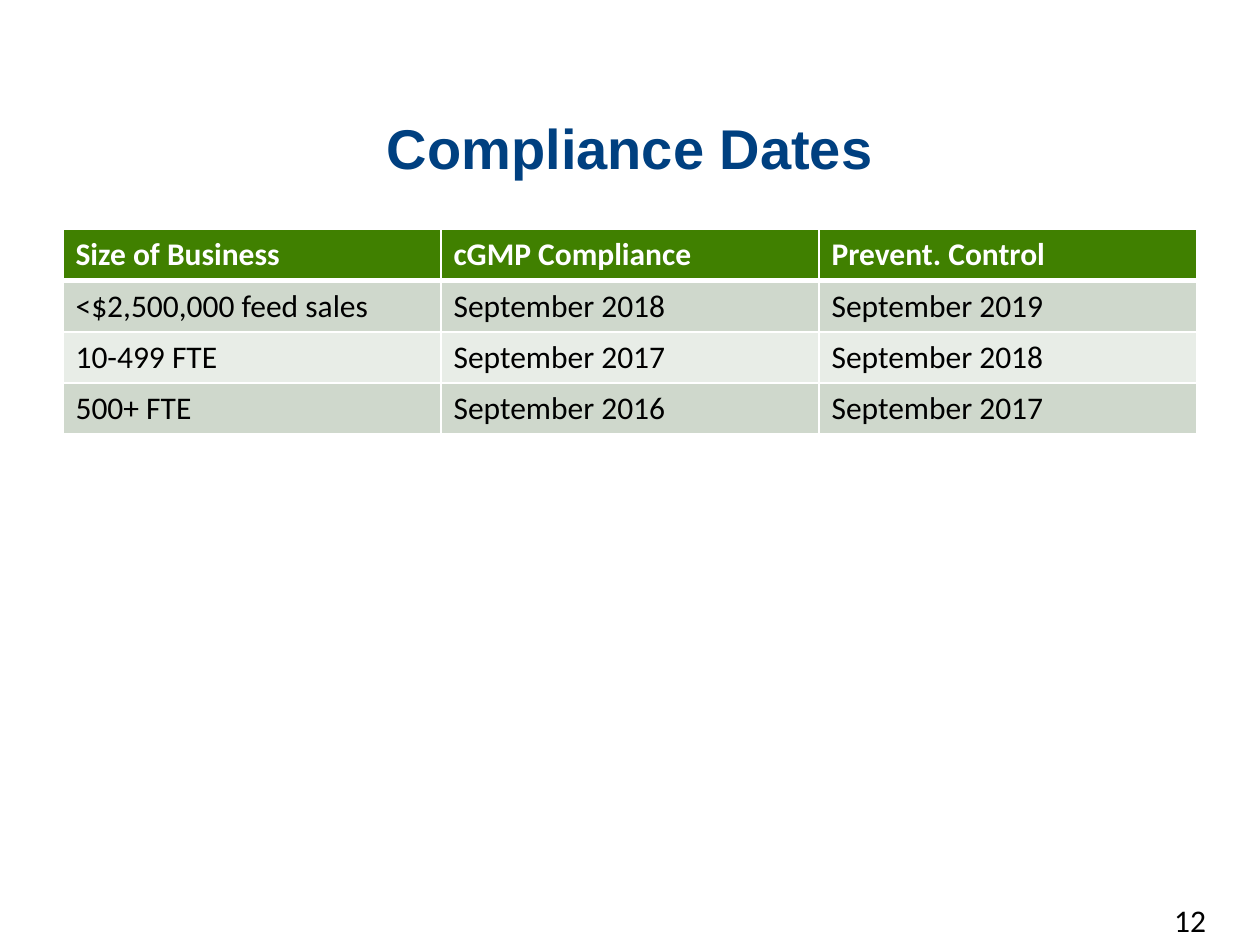
from lxml.etree import SubElement
from pptx import Presentation
from pptx.dml.color import RGBColor
from pptx.enum.text import MSO_ANCHOR as Anchor, PP_ALIGN as Align
from pptx.oxml.ns import qn
from pptx.util import Cm, Pt

WHITE = "FFFFFF"
BLACK = "000000"
NAVY = "004080"
GREEN = "408000"
BANDS = ("CFD8CC", "E8EDE7")
COMPLIANCE_ROWS = [
    ("Size of Business", "cGMP Compliance", "Prevent. Control"),
    ("<$2,500,000 feed sales", "September 2018", "September 2019"),
    ("10-499 FTE", "September 2017", "September 2018"),
    ("500+ FTE", "September 2016", "September 2017"),
]


def color(value):
    return RGBColor.from_string(value)


def add_span(para, text, size, font, fill, bold=False):
    span = para.add_run()
    span.text = text
    span.font.size = Pt(size)
    span.font.name = font
    span.font.bold = bold
    span.font.color.rgb = color(fill)


def set_title(page, text):
    title = page.shapes.title
    title.left, title.top = Cm(1.27), Cm(1.37)
    title.width, title.height = Cm(22.86), Cm(3.18)
    title.text_frame.vertical_anchor = Anchor.MIDDLE
    para = title.text_frame.paragraphs[0]
    para.alignment = Align.CENTER
    add_span(para, text, 32, "Arial", NAVY, True)


def set_border(cell, side, width):
    line = SubElement(cell._tc.get_or_add_tcPr(), qn(f"a:ln{side}"), w=str(Pt(width)))
    fill = SubElement(line, qn("a:solidFill"))
    SubElement(fill, qn("a:srgbClr"), val=WHITE)


def format_cell(cell, text, row):
    header = row == 0
    for side in "LRTB":
        under_header = (row, side) in ((0, "B"), (1, "T"))
        set_border(cell, side, 3 if under_header else 1)
    cell.fill.solid()
    cell.fill.fore_color.rgb = color(GREEN if header else BANDS[(row - 1) % 2])
    para = cell.text_frame.paragraphs[0]
    add_span(para, text, 18, "Calibri", WHITE if header else BLACK, header)


def add_compliance_table(page, rows):
    frame = page.shapes.add_table(
        len(rows), len(rows[0]), Cm(1.27), Cm(4.63), Cm(22.86), Cm(4.12)
    )
    for row, texts in enumerate(rows):
        for column, text in enumerate(texts):
            format_cell(frame.table.cell(row, column), text, row)


def add_page_number(page, number):
    box = page.shapes.add_textbox(Cm(23.42), Cm(18.03), Cm(1.37), Cm(1))
    box.text_frame.word_wrap = True
    add_span(box.text_frame.paragraphs[0], number, 18, "Calibri", BLACK)


def main():
    deck = Presentation()
    deck.slide_width, deck.slide_height = Cm(25.4), Cm(19.05)
    page = deck.slides.add_slide(deck.slide_layouts[5])
    page.background.fill.solid()
    page.background.fill.fore_color.rgb = color(WHITE)
    set_title(page, "Compliance Dates")
    add_compliance_table(page, COMPLIANCE_ROWS)
    add_page_number(page, "12")
    deck.save("out.pptx")


if __name__ == "__main__":
    main()
